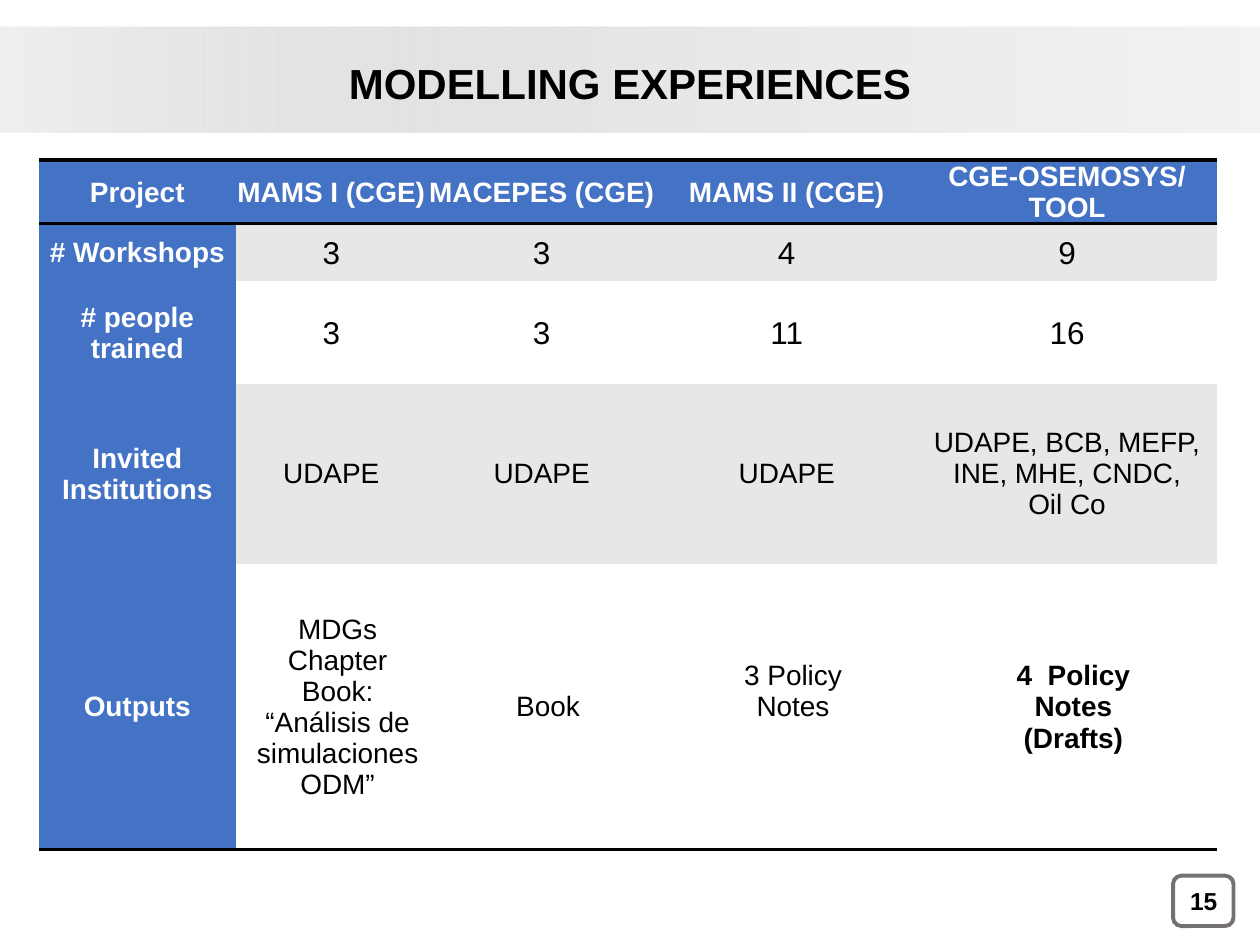
from lxml.etree import SubElement
from pptx import Presentation
from pptx.dml.color import RGBColor
from pptx.enum.shapes import MSO_SHAPE
from pptx.enum.text import MSO_ANCHOR, PP_ALIGN
from pptx.oxml import parse_xml
from pptx.oxml.ns import nsdecls, qn
from pptx.util import Inches, Pt

BLACK, WHITE, BLUE, GRAY = "000000", "FFFFFF", "4472C4", "E7E7E7"
PLAIN = "{2D5ABB26-0587-4C30-8999-92F81FD0307C}"
COLS = [1.56, 1.52, 1.82, 2.07, 2.38]
TALL = [0.46, 0.46, 0.81, 1.43, 2.27]
ROWS = [
    ["Project", "MAMS I (CGE)", "MACEPES (CGE)", "MAMS II (CGE)", "CGE-OSEMOSYS/TOOL"],
    ["# Workshops", "3", "3", "4", "9"],
    ["# people\ntrained", "3", "3", "11", "16"],
    ["Invited Institutions", "UDAPE", "UDAPE", "UDAPE",
     "UDAPE, BCB, MEFP, INE, MHE, CNDC,\nOil Co"],
    ["Outputs", "MDGs Chapter Book: “Análisis de simulaciones ODM”", "Book",
     "3 Policy\nNotes", "4  Policy\nNotes\n(Drafts)"],
]


def color(code):
    """Turn a hex string into a colour."""
    return RGBColor.from_string(code)


def write(frame, text, size, tint=BLACK, bold=True, align=PP_ALIGN.CENTER):
    """Fill a text frame and format its runs."""
    frame.text = text
    for para in frame.paragraphs:
        para.alignment = align
        for run in para.runs:
            font = run.font
            font.name, font.size, font.bold = "Arial", Pt(size), bold
            font.color.rgb = color(tint)


def add_band(slide):
    """Draw the shaded band behind the title."""
    band = slide.shapes.add_shape(
        MSO_SHAPE.RECTANGLE, 0, Inches(0.21), Inches(10), Inches(0.84))
    band.shadow.inherit = False
    band.line.fill.background()
    band.fill.gradient()
    band.fill.gradient_angle = 0
    stops = band.element.spPr.find(qn("a:gradFill")).find(qn("a:gsLst"))
    for stop in list(stops):
        stops.remove(stop)
    for pos, code, alpha in [(0, "C3C2C2", 25), (49, "E7E6E6", 100), (100, "F2F2F2", 100)]:
        stop = SubElement(stops, qn("a:gs"), pos=str(pos * 1000))
        tint = SubElement(stop, qn("a:srgbClr"), val=code)
        SubElement(tint, qn("a:alpha"), val=str(alpha * 1000))


def add_frame(slide):
    """Draw the rounded frame of the page number."""
    frame = slide.shapes.add_shape(
        MSO_SHAPE.ROUNDED_RECTANGLE, Inches(9.31), Inches(6.95), Inches(0.48), Inches(0.4))
    frame.shadow.inherit = False
    frame.fill.background()
    frame.line.color.rgb = color("767171")
    frame.line.width = Pt(2.25)


def add_rule(cell, side):
    """Draw a black rule on one side of a cell."""
    cell._tc.get_or_add_tcPr().append(parse_xml(
        f'<a:{side} {nsdecls("a")} w="{Pt(2)}"><a:solidFill>'
        f'<a:srgbClr val="{BLACK}"/></a:solidFill></a:{side}>'))


def set_cell(cell, text, row, col):
    """Fill and format one table cell by its place."""
    head, last = row == 0, row == len(ROWS) - 1
    label = head or col == 0
    if head:
        add_rule(cell, "lnT")
    if head or last:
        add_rule(cell, "lnB")
    cell.fill.solid()
    cell.fill.fore_color.rgb = color(BLUE if label else GRAY if row % 2 else WHITE)
    cell.vertical_anchor = MSO_ANCHOR.MIDDLE
    cell.margin_left = cell.margin_right = cell.margin_top = Inches(0.01)
    cell.margin_bottom = 0
    bold = label or (last and col == len(COLS) - 1)
    size = 18 if text.isdigit() else 16
    write(cell.text_frame, text, size, WHITE if label else BLACK, bold)
    if last and not label:
        for para in cell.text_frame.paragraphs:
            para._p.get_or_add_pPr().set("marL", str(Inches(0.1)))


def add_grid(slide):
    """Build the table of projects."""
    grid = slide.shapes.add_table(
        len(ROWS), len(COLS), Inches(0.31), Inches(1.27), Inches(9.34), Inches(5.43)).table
    grid.horz_banding = False
    grid._tbl.tblPr.find(qn("a:tableStyleId")).text = PLAIN
    for col, wide in zip(grid.columns, COLS):
        col.width = Inches(wide)
    for row, tall in zip(grid.rows, TALL):
        row.height = Inches(tall)
    for row, texts in enumerate(ROWS):
        for col, text in enumerate(texts):
            set_cell(grid.cell(row, col), text, row, col)
    grid.cell(4, 3).margin_bottom = Inches(0.25)


def set_title(slide):
    """Place the title in front of its band."""
    title = slide.shapes.title
    title.left, title.top = Inches(0.81), Inches(0.41)
    title.width, title.height = Inches(8.38), Inches(0.5)
    write(title.text_frame, "MODELLING EXPERIENCES", 24)
    title.text_frame.vertical_anchor = MSO_ANCHOR.MIDDLE
    title.element.getparent().append(title.element)


def add_page(slide):
    """Write the page number."""
    box = slide.shapes.add_textbox(Inches(7.51), Inches(6.95), Inches(2.25), Inches(0.4))
    box.text_frame.word_wrap = True
    box.text_frame.vertical_anchor = MSO_ANCHOR.MIDDLE
    write(box.text_frame, "15", 14, align=PP_ALIGN.RIGHT)


def main():
    """Build the slide and save it."""
    deck = Presentation()
    deck.slide_width, deck.slide_height = Inches(10), Inches(7.5)
    slide = deck.slides.add_slide(deck.slide_layouts[5])
    add_frame(slide)
    add_band(slide)
    add_grid(slide)
    set_title(slide)
    add_page(slide)
    deck.save("out.pptx")


if __name__ == "__main__":
    main()
